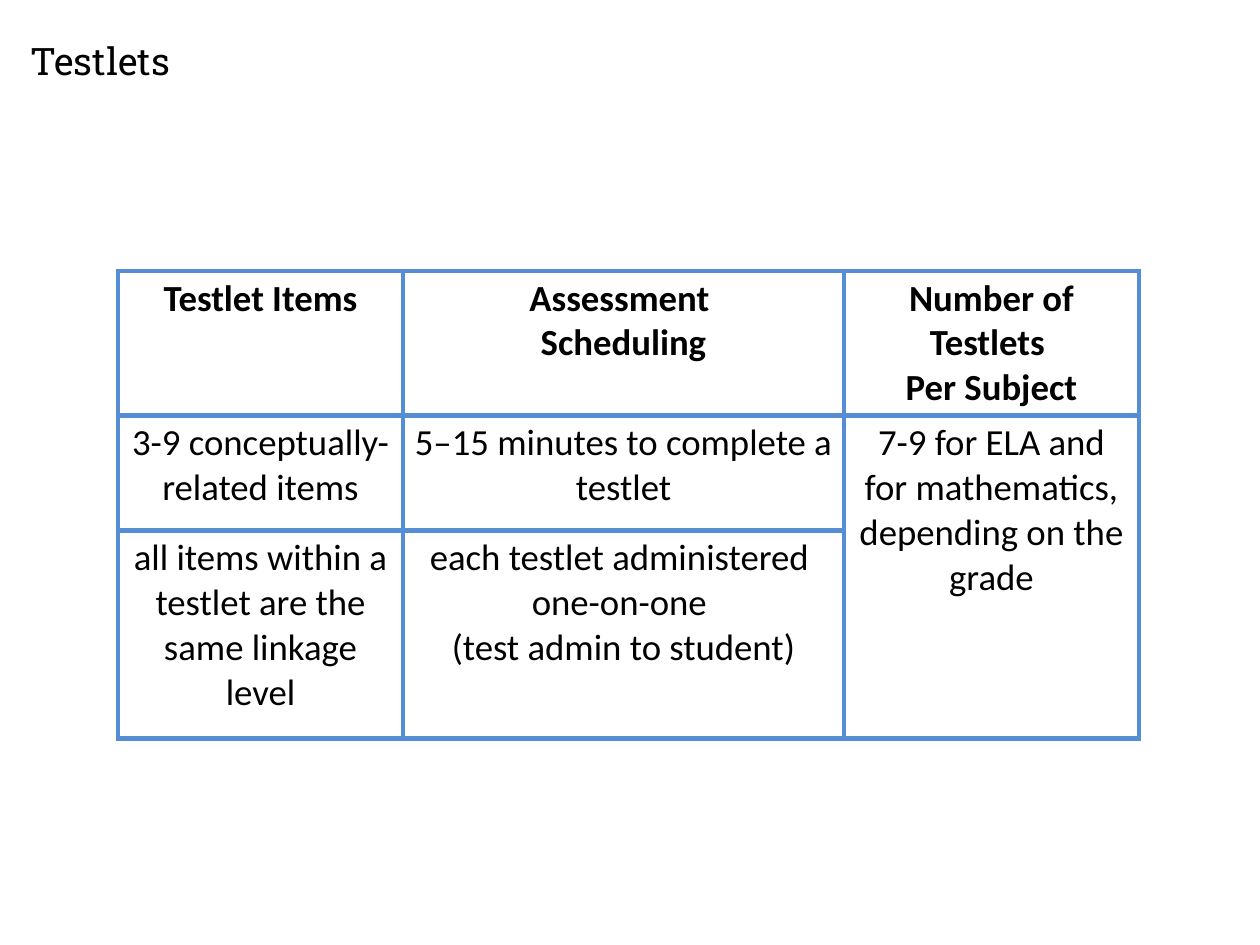
from dataclasses import dataclass

from lxml.etree import SubElement
from pptx import Presentation
from pptx.dml.color import RGBColor
from pptx.enum.text import MSO_ANCHOR, MSO_AUTO_SIZE, PP_ALIGN
from pptx.oxml.ns import qn
from pptx.util import Emu, Pt

BLACK = RGBColor(0x00, 0x00, 0x00)
BLUE = RGBColor(0x55, 0x8E, 0xD5)
PX_PER_INCH = 126
BORDER_PT = 3
COLUMNS = [285, 441, 295]
ROWS = [141, 115, 208]


@dataclass
class CellText:
    row: int
    col: int
    text: str
    bold: bool = False


CELLS = [
    CellText(0, 0, "Testlet Items", True),
    CellText(0, 1, "Assessment \nScheduling", True),
    CellText(0, 2, "Number of Testlets \nPer Subject", True),
    CellText(1, 0, "3-9 conceptually-related items"),
    CellText(1, 1, "5–15 minutes to complete a testlet"),
    CellText(1, 2, "7-9 for ELA and for mathematics, depending on the grade"),
    CellText(2, 0, "all items within a testlet are the same linkage level"),
    CellText(2, 1, "each testlet administered \none-on-one \n(test admin to student)"),
]


def px(n: int) -> Emu:
    return Emu(round(n * 914400 / PX_PER_INCH))


def style_font(font, name: str, size: float, bold: bool = False) -> None:
    font.name = name
    font.size = Pt(size)
    font.bold = bold
    font.color.rgb = BLACK


def add_borders(cell) -> None:
    tc_pr = cell._tc.get_or_add_tcPr()
    for side in ("a:lnL", "a:lnR", "a:lnT", "a:lnB"):
        ln = SubElement(tc_pr, qn(side), w=str(Pt(BORDER_PT)))
        fill = SubElement(ln, qn("a:solidFill"))
        SubElement(fill, qn("a:srgbClr"), val=str(BLUE))


def fill_cell(table, item: CellText) -> None:
    cell = table.cell(item.row, item.col)
    cell.text_frame.text = item.text
    for p in cell.text_frame.paragraphs:
        p.alignment = PP_ALIGN.CENTER
        for r in p.runs:
            style_font(r.font, "Calibri", 21, item.bold)


def add_title(s, text: str) -> None:
    sp = s.shapes.title
    sp.left, sp.top, sp.width, sp.height = px(30), px(43), px(1198), px(82)
    tf = sp.text_frame
    tf.text = text
    tf.word_wrap = True
    tf.auto_size = MSO_AUTO_SIZE.NONE
    tf.vertical_anchor = MSO_ANCHOR.TOP
    tf.margin_left = tf.margin_right = tf.margin_top = tf.margin_bottom = 0
    p = tf.paragraphs[0]
    p.alignment = PP_ALIGN.LEFT
    p.line_spacing = 0.9
    style_font(p.runs[0].font, "Roboto Slab", 21.6)


def add_testlet_table(s) -> None:
    table = s.shapes.add_table(
        len(ROWS), len(COLUMNS), px(118), px(271), px(sum(COLUMNS)), px(sum(ROWS))
    ).table
    table.first_row = table.horz_banding = False
    for column, width in zip(table.columns, COLUMNS):
        column.width = px(width)
    for row, height in zip(table.rows, ROWS):
        row.height = px(height)
    for cell in table.iter_cells():
        add_borders(cell)
        cell.fill.background()
        cell.margin_left = cell.margin_right = px(9)
        cell.margin_top = cell.margin_bottom = px(5)
    table.cell(1, 2).merge(table.cell(2, 2))
    for item in CELLS:
        fill_cell(table, item)


def main() -> None:
    prs = Presentation()
    prs.slide_width, prs.slide_height = px(1260), px(945)
    s = prs.slides.add_slide(prs.slide_layouts[5])
    add_testlet_table(s)
    add_title(s, "Testlets")
    prs.save("out.pptx")


if __name__ == "__main__":
    main()
